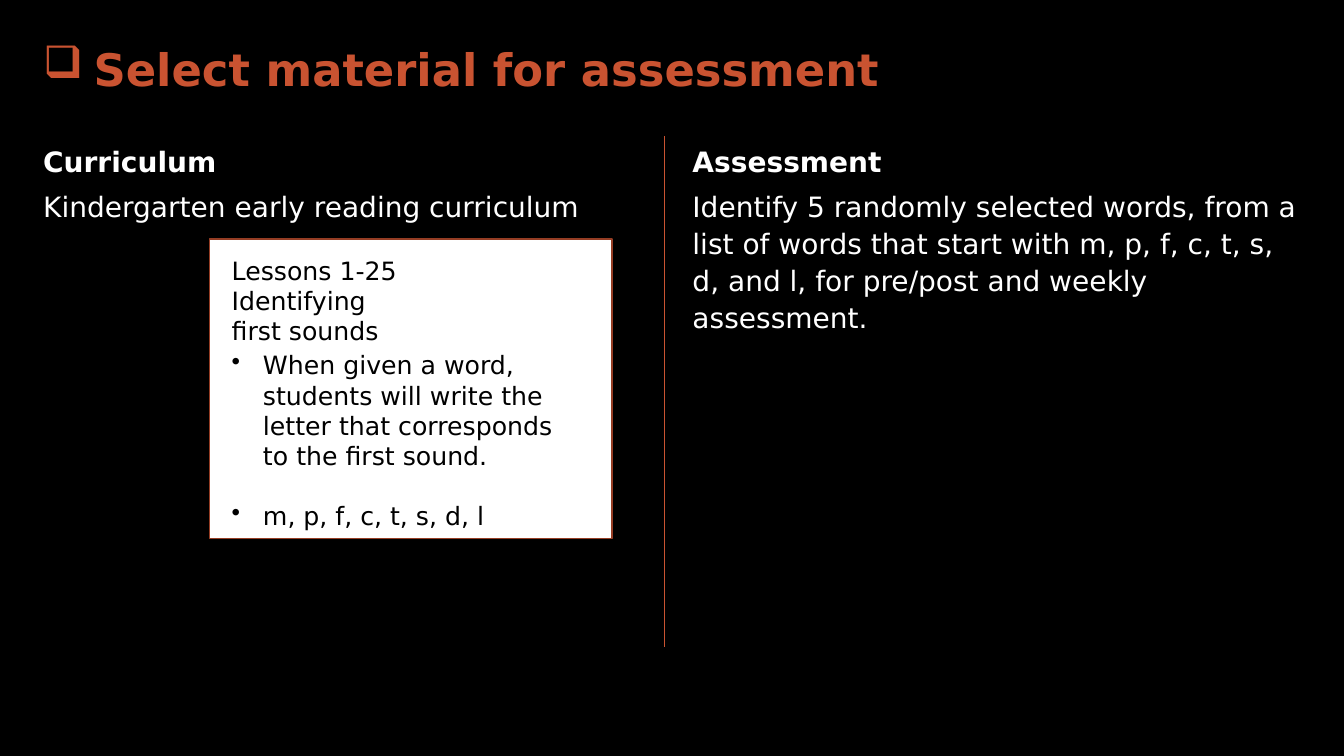
"""Build the slide on selecting material for assessment."""
import pptx
import pptx.dml.color
import pptx.enum.shapes
import pptx.enum.text
import pptx.oxml.ns
import pptx.util
from lxml import etree
from pptx.util import Inches

BLACK = pptx.dml.color.RGBColor(0x00, 0x00, 0x00)
WHITE = pptx.dml.color.RGBColor(0xFF, 0xFF, 0xFF)
ORANGE = pptx.dml.color.RGBColor(0xC9, 0x53, 0x31)
BROWN = pptx.dml.color.RGBColor(0x95, 0x3D, 0x24)
FONT = "DejaVu Sans"
COLUMN_TOP, COLUMN_HEIGHT = 1.35, 5.07


def add_text(s, left, top, width, height, paragraphs, size, color):
    """Add a wrapping text box with one paragraph per string."""
    tf = s.shapes.add_textbox(
        Inches(left), Inches(top), Inches(width), Inches(height)).text_frame
    tf.word_wrap = True
    tf.text = "\n".join(paragraphs)
    for p in tf.paragraphs:
        for r in p.runs:
            r.font.name = FONT
            r.font.size = pptx.util.Pt(size)
            r.font.color.rgb = color
    return tf


def add_bullet(p, char, indent):
    """Give a paragraph a bullet with a hanging indent."""
    pPr = p._p.get_or_add_pPr()
    pPr.set("marL", str(Inches(indent)))
    pPr.set("indent", str(-Inches(indent)))
    etree.SubElement(pPr, pptx.oxml.ns.qn("a:buChar")).set("char", char)


def set_bold(p):
    """Make every run of a paragraph bold."""
    for r in p.runs:
        r.font.bold = True


def add_title(s, text):
    """Add the bulleted slide title."""
    tf = add_text(s, 0.33, 0.25, 12.67, 0.8, [text], 32, ORANGE)
    tf.vertical_anchor = pptx.enum.text.MSO_ANCHOR.MIDDLE
    p = tf.paragraphs[0]
    add_bullet(p, "❑", 0.5)
    p.line_spacing = 1.1
    set_bold(p)


def add_column(s, left, heading, body):
    """Add a column with a bold heading above its body text."""
    tf = add_text(s, left, COLUMN_TOP, 6.23, COLUMN_HEIGHT, [heading, body], 20, WHITE)
    for p in tf.paragraphs:
        p.line_spacing = 1.1
    tf.paragraphs[1].space_before = pptx.util.Pt(6)
    set_bold(tf.paragraphs[0])


def add_divider(s, x):
    """Add the vertical rule between the columns."""
    line = s.shapes.add_connector(
        pptx.enum.shapes.MSO_CONNECTOR.STRAIGHT, Inches(x), Inches(COLUMN_TOP),
        Inches(x), Inches(COLUMN_TOP + COLUMN_HEIGHT))
    line.line.color.rgb = ORANGE
    line.line.width = pptx.util.Pt(0.5)
    etree.SubElement(line._element.spPr, pptx.oxml.ns.qn("a:effectLst"))


def add_lesson_card(s, heading, points):
    """Add the white card with a lesson heading and bulleted points."""
    card = s.shapes.add_shape(
        pptx.enum.shapes.MSO_SHAPE.RECTANGLE,
        Inches(2.08), Inches(2.37), Inches(3.99), Inches(2.97))
    card.shadow.inherit = False
    card.fill.solid()
    card.fill.fore_color.rgb = WHITE
    card.line.color.rgb = BROWN
    card.line.width = pptx.util.Pt(1)
    add_text(s, 2.2, 2.48, 3.51, 1.01, [heading], 18, BLACK)
    tf = add_text(s, 2.2, 3.42, 3.51, 1.92, points, 18, BLACK)
    for p in tf.paragraphs:
        add_bullet(p, "•", 0.31)
    for p in tf.paragraphs[1:]:
        p.space_before = pptx.util.Pt(21)


def main():
    """Build and save the slide."""
    prs = pptx.Presentation()
    prs.slide_width, prs.slide_height = Inches(13.33), Inches(7.5)
    s = prs.slides.add_slide(prs.slide_layouts[6])
    s.background.fill.solid()
    s.background.fill.fore_color.rgb = BLACK
    add_title(s, "Select material for assessment")
    add_column(s, 0.33, "Curriculum", "Kindergarten early reading curriculum")
    add_lesson_card(s, "Lessons 1-25\vIdentifying\vfirst sounds", [
        "When given a word, students will write the letter that corresponds "
        "to the first sound.",
        "m, p, f, c, t, s, d, l"])
    add_divider(s, 6.59)
    add_column(s, 6.77, "Assessment",
               "Identify 5 randomly selected words, from a list of words that start "
               "with m, p, f, c, t, s, d, and l, for pre/post and weekly assessment.")
    prs.save("out.pptx")


if __name__ == "__main__":
    main()
